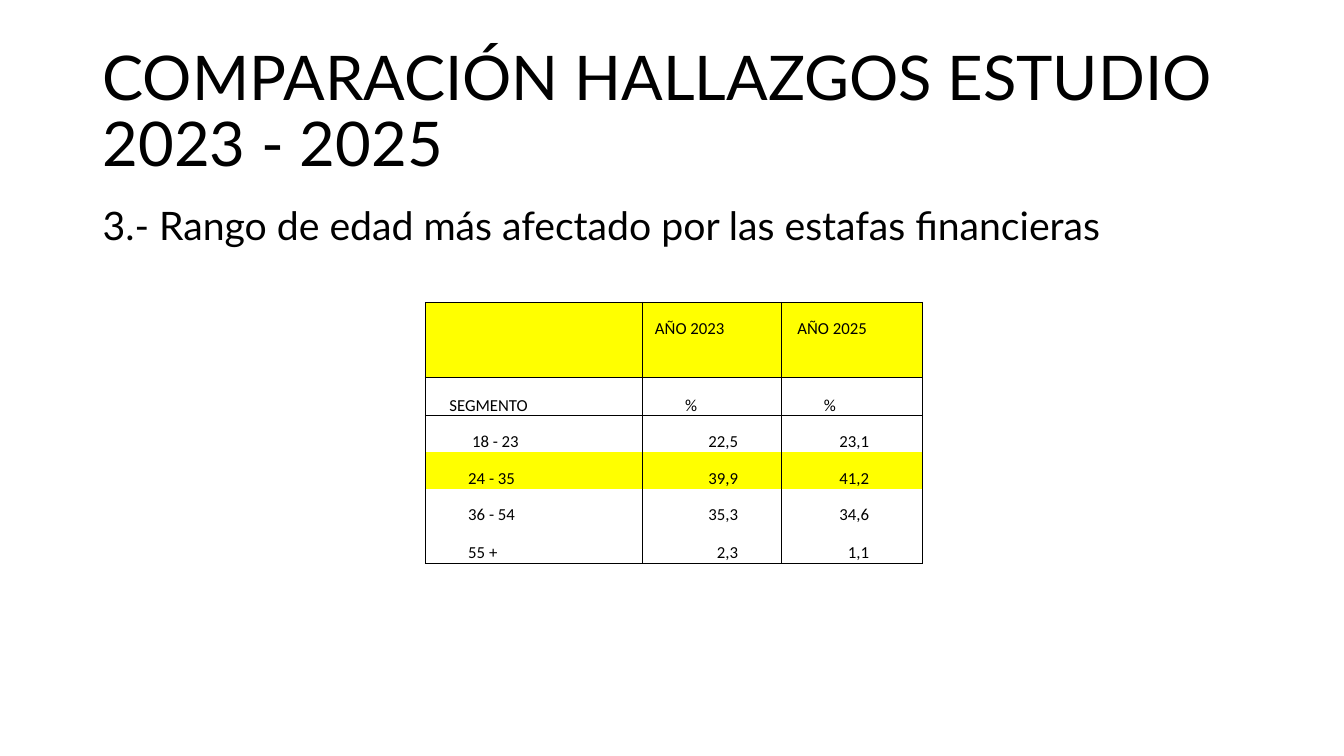
from lxml import etree
from pptx import Presentation
from pptx import util as u
from pptx.dml.color import RGBColor
from pptx.enum import text
from pptx.oxml import ns

TITLE = "COMPARACIÓN HALLAZGOS ESTUDIO 2023 - 2025"
FINDING = "3.- Rango de edad más afectado por las estafas financieras"

YEARS = [("AÑO 2023", 3, 8.9), ("AÑO 2025", 5, 11.6)]
SEGMENTS = [
    ("18 - 23", "22,5", "23,1", 33.2),
    ("24 - 35", "39,9", "41,2", 30.5),
    ("36 - 54", "35,3", "34,6", 30.5),
    ("55 +", "2,3", "1,1", 30.5),
]

THEME = {
    "ink": "000000",
    "highlight": "FFFF00",
    "heading_font": "Lato",
    "table_font": "Calibri",
    "title_size": 44,
    "finding_size": 28,
    "table_size": 12,
    "rule": 1,
}

COLUMN_WIDTHS = [65, 24.5, 56, 69, 30, 63.5, 37.5]
ROW_HEIGHTS = [26, 27.5, 27.5, 26, 26, 26, 27.5]
FIRST_SEGMENT_ROW = 3
HIGHLIGHT_ROWS = {0, 1, 4}
COLUMN_RULES = {0, 3, 5, 7}
ROW_RULES = {0, 2, 3, 7}
MERGES = [(0, 3, 4), (0, 5, 6), (2, 0, 2), (2, 5, 6),
          (3, 0, 2), (4, 0, 2), (5, 0, 2), (6, 0, 1)]
CELL_INSET = 0.72


def write(frame, content, size, font, align=text.PP_ALIGN.LEFT, line=1.0, before=0):
    paragraph = frame.paragraphs[0]
    paragraph.alignment = align
    paragraph.line_spacing = line
    paragraph.space_before = u.Pt(before)
    run = paragraph.add_run()
    run.text = content
    run.font.size = u.Pt(size)
    run.font.name = font
    run.font.color.rgb = RGBColor.from_string(THEME["ink"])


def add_heading(slide, content, top, height, size, anchor, before=0):
    shape = slide.shapes.add_textbox(u.Pt(66.25), u.Pt(top), u.Pt(828), u.Pt(height))
    shape.text_frame.word_wrap = True
    shape.text_frame.vertical_anchor = anchor
    write(shape.text_frame, content, size, THEME["heading_font"], line=0.9, before=before)


def set_borders(cell, edges):
    properties = cell._tc.get_or_add_tcPr()
    for side, visible in edges.items():
        line = etree.SubElement(properties, ns.qn(f"a:ln{side}"))
        line.set("w", str(u.Pt(THEME["rule"])))
        if visible:
            fill = etree.SubElement(line, ns.qn("a:solidFill"))
            etree.SubElement(fill, ns.qn("a:srgbClr")).set("val", THEME["ink"])
        else:
            etree.SubElement(line, ns.qn("a:noFill"))


def table_entries():
    entries = {(0, column): (year, indent, False) for year, column, indent in YEARS}
    entries[2, 0] = ("SEGMENTO", 17, False)
    for _, column, _ in YEARS:
        entries[2, column] = ("%", 30.5, False)
    for row, (segment, first, second, indent) in enumerate(SEGMENTS, FIRST_SEGMENT_ROW):
        entries[row, 0] = (segment, indent, False)
        entries[row, 3] = (first, CELL_INSET, True)
        entries[row, 5] = (second, CELL_INSET, True)
    return entries


def add_comparison(slide):
    table = slide.shapes.add_table(
        len(ROW_HEIGHTS), len(COLUMN_WIDTHS), u.Pt(304), u.Pt(216),
        u.Pt(sum(COLUMN_WIDTHS)), u.Pt(sum(ROW_HEIGHTS))).table
    table.first_row = False
    table.horz_banding = False
    for column, width in zip(table.columns, COLUMN_WIDTHS):
        column.width = u.Pt(width)
    for row, height in zip(table.rows, ROW_HEIGHTS):
        row.height = u.Pt(height)
    for row, first, last in MERGES:
        table.cell(row, first).merge(table.cell(row, last))

    entries = table_entries()
    for row in range(len(ROW_HEIGHTS)):
        for column in range(len(COLUMN_WIDTHS)):
            cell = table.cell(row, column)
            content, indent, right = entries.get((row, column), ("", CELL_INSET, False))
            end = column + (cell.span_width if cell.is_merge_origin else 1)
            set_borders(cell, {
                "L": column in COLUMN_RULES,
                "R": end in COLUMN_RULES,
                "T": row in ROW_RULES,
                "B": row + 1 in ROW_RULES,
            })
            if row in HIGHLIGHT_ROWS:
                cell.fill.solid()
                cell.fill.fore_color.rgb = RGBColor.from_string(THEME["highlight"])
            else:
                cell.fill.background()
            cell.margin_left = u.Pt(indent)
            cell.margin_right = cell.margin_top = u.Pt(CELL_INSET)
            cell.margin_bottom = 0
            cell.vertical_anchor = text.MSO_ANCHOR.BOTTOM
            write(cell.text_frame, content, THEME["table_size"], THEME["table_font"],
                  align=text.PP_ALIGN.RIGHT if right else text.PP_ALIGN.LEFT)


def main():
    presentation = Presentation()
    presentation.slide_width = u.Pt(960)
    presentation.slide_height = u.Pt(540)
    slide = presentation.slides.add_slide(presentation.slide_layouts[6])
    add_heading(slide, TITLE, 28.75, 104.5, THEME["title_size"], text.MSO_ANCHOR.MIDDLE)
    add_heading(slide, FINDING, 144, 342.75, THEME["finding_size"],
                text.MSO_ANCHOR.TOP, before=10)
    add_comparison(slide)
    presentation.save("out.pptx")


if __name__ == "__main__":
    main()
